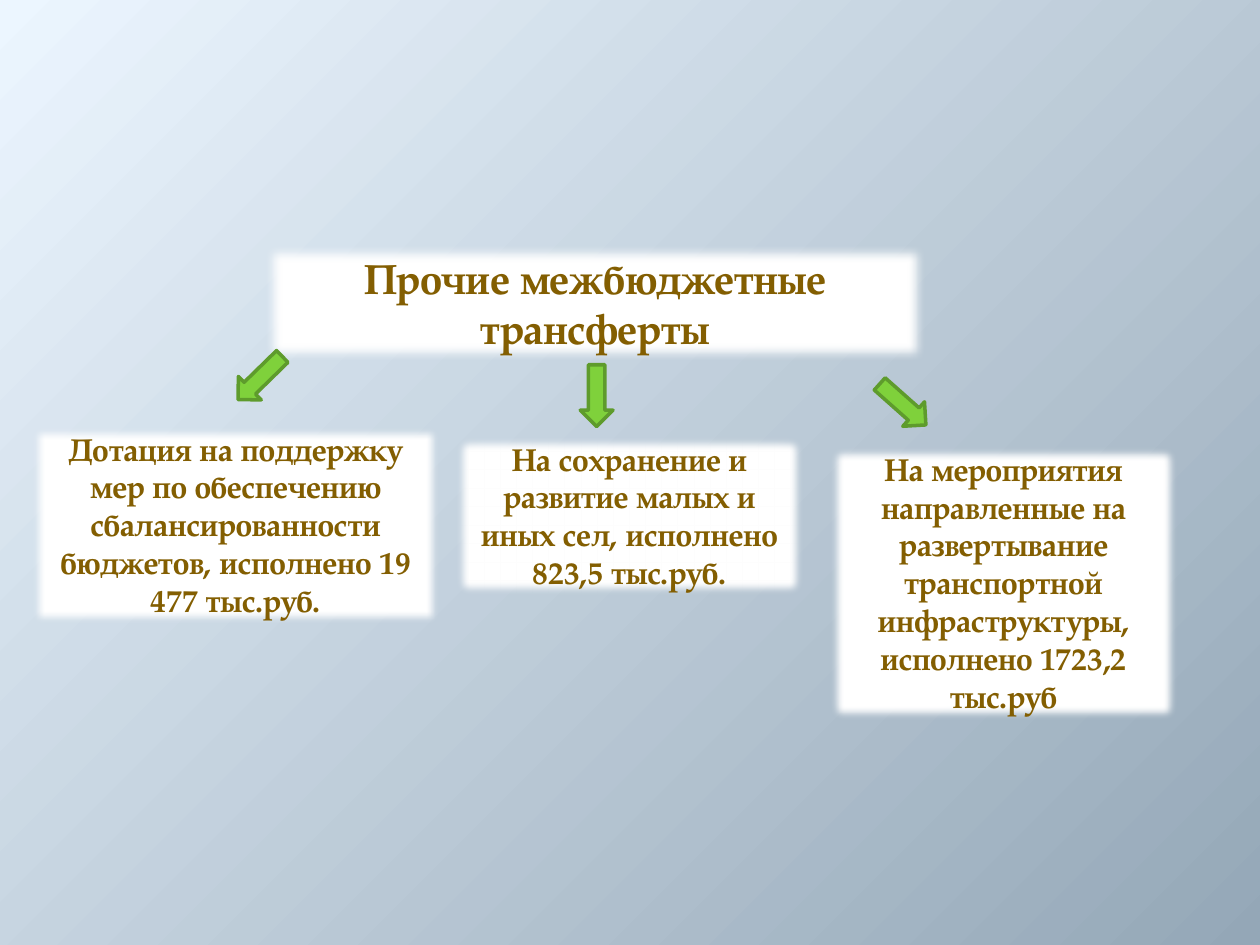
from dataclasses import dataclass

from lxml.etree import SubElement
from pptx import Presentation
from pptx.dml.color import RGBColor
from pptx.enum.shapes import MSO_SHAPE
from pptx.enum.text import MSO_ANCHOR, MSO_AUTO_SIZE, PP_ALIGN
from pptx.oxml.ns import qn
from pptx.util import Inches, Pt


@dataclass(frozen=True)
class Theme:
    face: str = "TeX Gyre Pagella"
    ink: str = "835E01"
    paper: str = "FFFFFF"
    arrow: str = "7FD13B"
    edge: str = "5E9B2C"
    light: str = "ECF6FF"
    dark: str = "94A7B7"
    head: int = 24
    body: int = 18


THEME = Theme()
COLS, ROWS = 100, 75  # grid of square cells
CELL = Inches(0.1)
SOFT = Inches(0.07)

# Grant boxes: left column, width, height, paragraphs
GRANTS = [
    (2.3, 32.8, 16.2, ["Дотация на поддержку мер по обеспечению "
                       "сбалансированности бюджетов, исполнено 19 477 тыс.руб."]),
    (35.9, 28.1, 13.1, ["На сохранение и развитие малых и иных сел, "
                        "исполнено 823,5 тыс.руб."]),
    (65.6, 28.1, 22.2, ["На мероприятия направленные на развертывание "
                        "транспортной инфраструктуры,",
                        "исполнено 1723,2 тыс.руб"]),
]
TOP, STEP = 33.6, 0.8  # each box sits a little lower than the last

# Arrows: left column, top row, turn in degrees
ARROWS = [(18.2, 28.7, 135.7), (44.9, 30.1, 90), (69.2, 30.8, 41.6)]


def cells(*nums):
    return [round(n * CELL) for n in nums]


def color(code):
    return RGBColor.from_string(code)


def paint(shape, code):
    shape.fill.solid()
    shape.fill.fore_color.rgb = color(code)


def back(slide):
    """Shade the background outward from the top left corner."""
    fill = slide.background.fill
    fill.gradient()
    for stop, code in zip(fill.gradient_stops, (THEME.light, THEME.dark)):
        stop.color.rgb = color(code)
    grad = slide.background._cSld.find(".//" + qn("a:gradFill"))
    grad.remove(grad.find(qn("a:lin")))
    shade = SubElement(grad, qn("a:path"), path="circle")
    SubElement(shade, qn("a:fillToRect"), l="0", t="0", r="100000", b="100000")


def soften(shape):
    shape.shadow.inherit = False
    effects = shape._element.spPr.find(qn("a:effectLst"))
    SubElement(effects, qn("a:softEdge"), rad=str(SOFT))


def write(shape, paras, size):
    frame = shape.text_frame
    frame.text = "\n".join(paras)
    layout = {"word_wrap": True, "vertical_anchor": MSO_ANCHOR.TOP,
              "auto_size": MSO_AUTO_SIZE.SHAPE_TO_FIT_TEXT}
    for name, value in layout.items():
        setattr(frame, name, value)
    style = {"name": THEME.face, "size": Pt(size), "bold": True}
    for para in frame.paragraphs:
        para.alignment = PP_ALIGN.CENTER
        for name, value in style.items():
            setattr(para.font, name, value)
        para.font.color.rgb = color(THEME.ink)
        for run in para.runs:
            for name, value in style.items():
                setattr(run.font, name, value)
            run.font.color.rgb = color(THEME.ink)


def panel(shape, paras, size):
    """Give a shape the white, soft-edged look and its text."""
    paint(shape, THEME.paper)
    shape.line.fill.background()
    soften(shape)
    write(shape, paras, size)


def title(slide, text):
    shape = slide.shapes.title
    places = dict(zip(("left", "top", "width", "height"),
                      cells(21.1, 19.5, 52.3, 9.1)))
    for name, value in places.items():
        setattr(shape, name, value)
    panel(shape, [text], THEME.head)


def grant(slide, left, top, width, height, paras):
    shape = slide.shapes.add_shape(MSO_SHAPE.RECTANGLE,
                                   *cells(left, top, width, height))
    panel(shape, paras, THEME.body)


def arrow(slide, left, top, turn):
    shape = slide.shapes.add_shape(MSO_SHAPE.RIGHT_ARROW,
                                   *cells(left, top, 4.9, 2.6))
    shape.rotation = turn
    shape.shadow.inherit = False
    paint(shape, THEME.arrow)
    shape.line.color.rgb = color(THEME.edge)
    shape.line.width = Pt(2)


def main():
    deck = Presentation()
    deck.slide_width, deck.slide_height = cells(COLS, ROWS)
    slide = deck.slides.add_slide(deck.slide_layouts[5])  # title only
    back(slide)

    # Heading, then the grants it splits into
    title(slide, "Прочие межбюджетные трансферты")
    for i, (left, width, height, paras) in enumerate(GRANTS):
        grant(slide, left, TOP + i * STEP, width, height, paras)

    # Arrows from the heading to the grants
    for spot in ARROWS:
        arrow(slide, *spot)

    deck.save("out.pptx")


if __name__ == "__main__":
    main()
